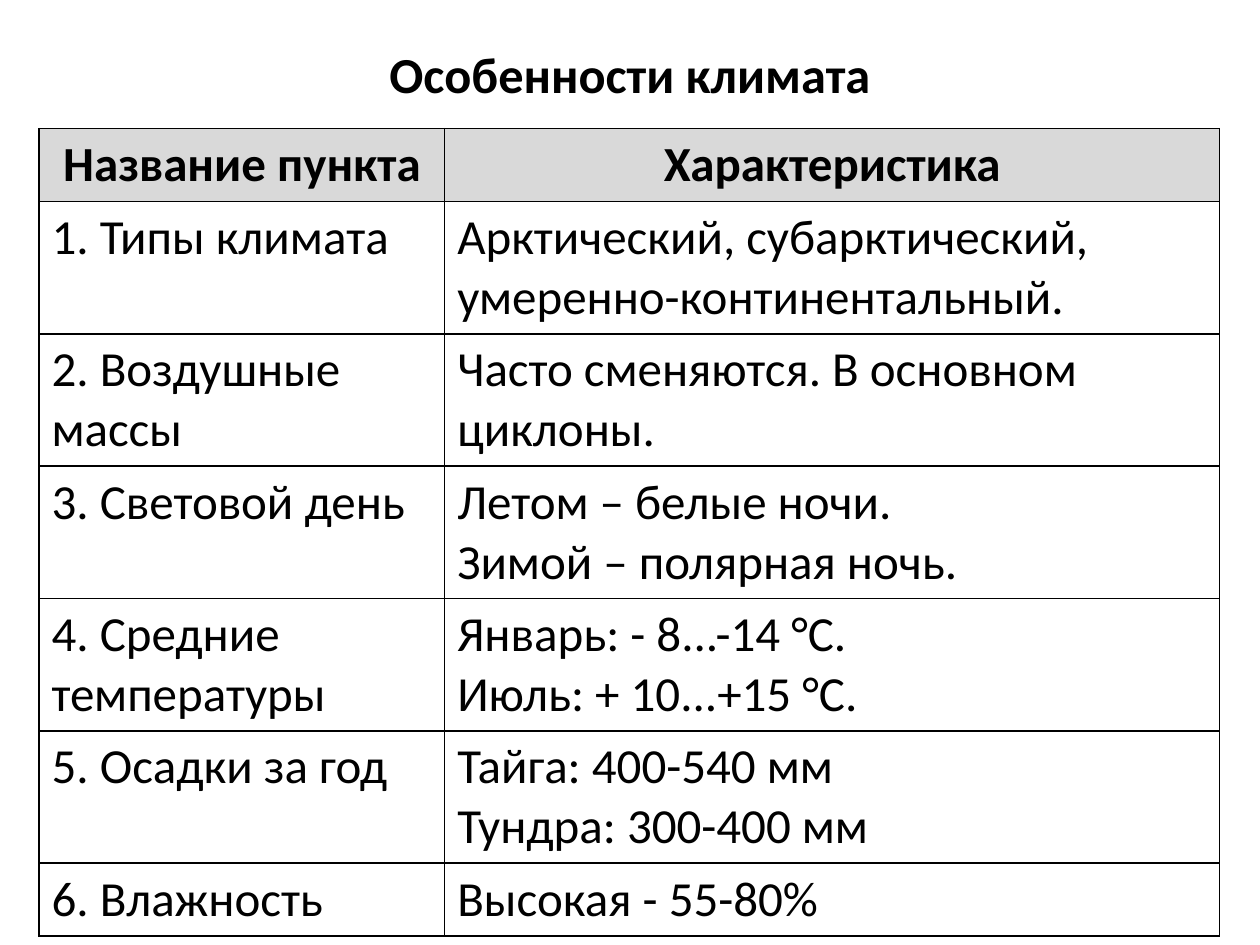
from dataclasses import dataclass

import pptx
import pptx.dml.color
import pptx.enum.text
import pptx.util
from lxml import etree
from pptx.oxml.ns import qn

Inches = pptx.util.Inches
Align = pptx.enum.text.PP_ALIGN
Anchor = pptx.enum.text.MSO_ANCHOR


@dataclass
class Row:
    name: str
    facts: str
    height: float = 1.05
    head: bool = False


ROWS = [
    Row("Название пункта", "Характеристика", 0.58, True),
    Row("1. Типы климата", "Арктический, субарктический, умеренно-континентальный."),
    Row("2. Воздушные массы", "Часто сменяются. В основном циклоны."),
    Row("3. Световой день", "Летом – белые ночи.\nЗимой – полярная ночь."),
    Row("4. Средние температуры", "Январь: - 8...-14 °С.\nИюль: + 10...+15 °С."),
    Row("5. Осадки за год", "Тайга: 400-540 мм\nТундра: 300-400 мм"),
    Row("6. Влажность", "Высокая - 55-80%", 0.58),
]
WIDTHS = [3.22, 6.15]


def paint(target, color: str) -> None:
    target.rgb = pptx.dml.color.RGBColor.from_string(color)


def write(frame, text: str, size: float, head: bool) -> None:
    frame.text = text
    for para in frame.paragraphs:
        para.alignment = Align.CENTER if head else Align.LEFT
        font = para.font
        font.name = "Calibri"
        font.size = pptx.util.Pt(size)
        font.bold = head
        paint(font.color, "000000")


def border(cell, color: str, width: float) -> None:
    props = cell._tc.get_or_add_tcPr()
    for spot, side in enumerate(("lnL", "lnR", "lnT", "lnB")):
        line = etree.Element(qn(f"a:{side}"), w=str(pptx.util.Pt(width)))
        fill = etree.SubElement(line, qn("a:solidFill"))
        etree.SubElement(fill, qn("a:srgbClr"), val=color)
        props.insert(spot, line)


def draw_title(slide, text: str) -> None:
    box = slide.shapes.add_textbox(Inches(0.5), Inches(0.3), Inches(9), Inches(0.56))
    frame = box.text_frame
    frame.word_wrap = True
    frame.vertical_anchor = Anchor.MIDDLE
    write(frame, text, 28.8, True)


def draw_table(slide, rows: list[Row]) -> None:
    high = sum(row.height for row in rows)
    table = slide.shapes.add_table(
        len(rows), len(WIDTHS), Inches(0.31), Inches(1.02),
        Inches(sum(WIDTHS)), Inches(high),
    ).table
    for col, width in zip(table.columns, WIDTHS):
        col.width = Inches(width)
    for line, row in zip(table.rows, rows):
        line.height = Inches(row.height)
        for cell, text in zip(line.cells, (row.name, row.facts)):
            write(cell.text_frame, text, 28, row.head)
            if row.head:
                cell.fill.solid()
                paint(cell.fill.fore_color, "D9D9D9")
            else:
                cell.fill.background()
            border(cell, "000000", 1)


def main() -> None:
    deck = pptx.Presentation()
    deck.slide_width = Inches(10)
    deck.slide_height = Inches(7.5)
    slide = deck.slides.add_slide(deck.slide_layouts[6])
    draw_title(slide, "Особенности климата")
    draw_table(slide, ROWS)
    deck.save("out.pptx")


if __name__ == "__main__":
    main()
